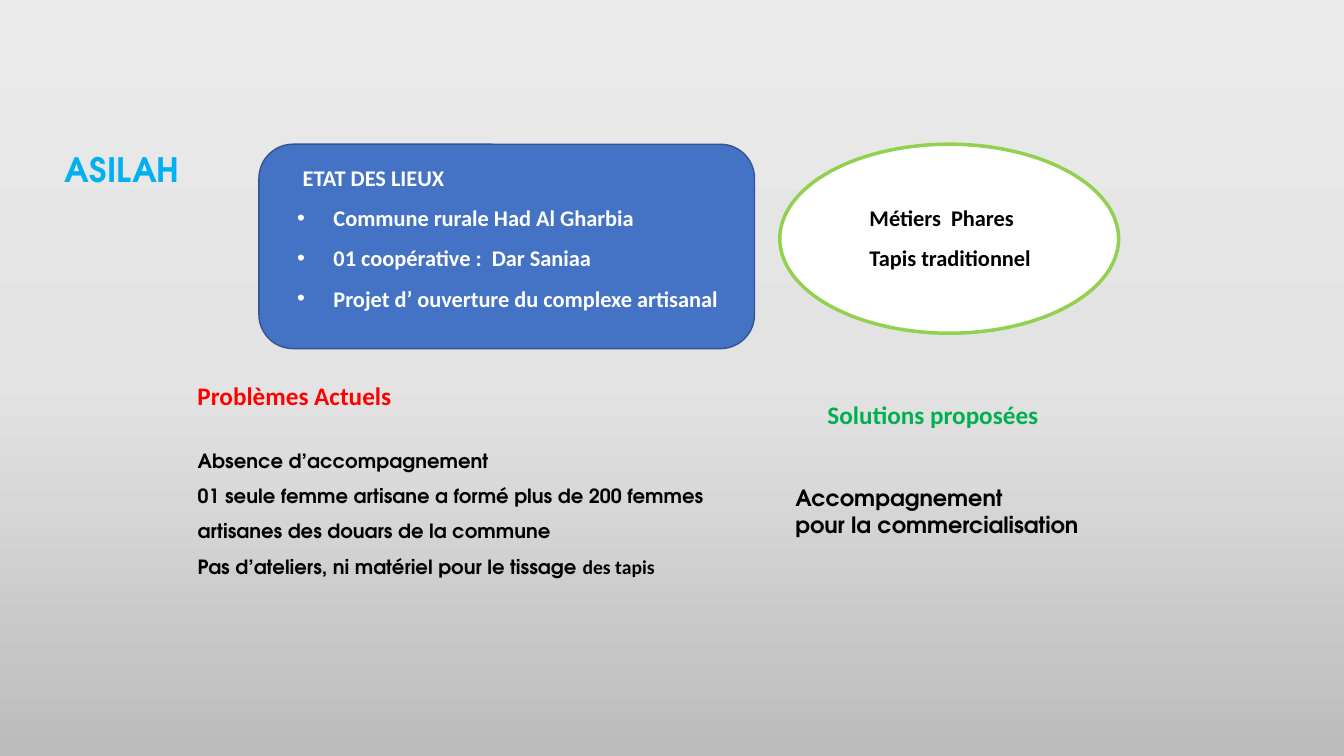
from copy import deepcopy

from lxml import etree
from pptx import Presentation
from pptx.dml.color import RGBColor
from pptx.enum.shapes import MSO_SHAPE
from pptx.enum.text import MSO_ANCHOR, MSO_AUTO_SIZE, PP_ALIGN
from pptx.oxml.ns import qn
from pptx.util import Pt

ROUND, OVAL = MSO_SHAPE.ROUNDED_RECTANGLE, MSO_SHAPE.OVAL
TOP, MID = MSO_ANCHOR.TOP, MSO_ANCHOR.MIDDLE
FIXED, LEFT = MSO_AUTO_SIZE.NONE, PP_ALIGN.LEFT
SANS, GEO = "Calibri", "TeX Gyre Adventor"


def tint(code):
    """Turn a hex string into a colour."""
    return RGBColor.from_string(code)


def assign(item, values):
    """Set each attribute of an item from a dict."""
    for name, value in values.items():
        setattr(item, name, value)


def place(item, box):
    """Move an item to a box given in points."""
    names = ("left", "top", "width", "height")
    assign(item, dict(zip(names, map(Pt, box))))


def mark(para, bullet, inset):
    """Give a paragraph its indent and its bullet, or none."""
    props = para._p.get_or_add_pPr()
    props.set("marL", str(Pt(inset)))
    props.set("indent", str(Pt(-inset if bullet else 0)))
    if bullet:
        etree.SubElement(props, qn("a:buFont")).set("typeface", "Arial")
        etree.SubElement(props, qn("a:buChar")).set("char", bullet)
    else:
        etree.SubElement(props, qn("a:buNone"))


def write(item, lines, look, hue, anchor=MID, space=1.0):
    """Fill an item with lines of (bullet, inset, runs of text and font)."""
    frame = item.text_frame
    assign(frame, {"word_wrap": True, "auto_size": FIXED,
                   "vertical_anchor": anchor})
    for index, (bullet, inset, runs) in enumerate(lines):
        para = frame.add_paragraph() if index else frame.paragraphs[0]
        mark(para, bullet, inset)
        assign(para, {"line_spacing": space, "space_before": Pt(0),
                      "alignment": LEFT})
        for text, face in runs:
            run = para.add_run()
            run.text = text
            assign(run.font, {"bold": True, **look, "name": face})
            run.font.color.rgb = tint(hue)


def plain(face, *texts):
    """Make unmarked lines in one font."""
    return [("", 0, [(text, face)]) for text in texts]


def label(slide, box, lines, look, hue, **rest):
    """Add a text box."""
    write(slide.shapes.add_textbox(*map(Pt, box)), lines, look, hue, **rest)


def panel(slide, kind, box, fill, edge, weight):
    """Add a filled and outlined shape."""
    shape = slide.shapes.add_shape(kind, *map(Pt, box))
    shape.shadow.inherit = False
    shape.fill.solid()
    shape.fill.fore_color.rgb = tint(fill)
    shape.line.color.rgb = tint(edge)
    shape.line.width = Pt(weight)


def backdrop(slide, codes):
    """Shade the background from top to bottom in even steps."""
    fill = slide.background.fill
    fill.gradient()
    fill.gradient_angle = 270
    stops = slide.element.find(".//" + qn("a:gsLst"))
    for _ in codes[2:]:
        stops.append(deepcopy(stops[0]))
    for index, (stop, code) in enumerate(zip(fill.gradient_stops, codes)):
        stop.color.rgb = tint(code)
        stop.position = index / (len(codes) - 1)


def status(slide, body, box):
    """Draw the current state panel with its list."""
    left, top, width, height = box
    panel(slide, ROUND, box, "4472C4", "325491", 1)
    place(body, (left + 20, top, width - 11, height - 22))
    body.element.getparent().append(body.element)
    points = ("Commune rurale Had Al Gharbia",
              "01 coopérative :  Dar Saniaa",
              "Projet d’ ouverture du complexe artisanal")
    lines = [("", 4, [("ETAT DES LIEUX", SANS)])]
    lines += [("•", 26, [(point, SANS)]) for point in points]
    write(body, lines, {"size": Pt(16)}, "FFFFFF", space=1.5)


def crafts(slide, box):
    """Draw the oval with the leading crafts."""
    left, top, width, height = box
    panel(slide, OVAL, box, "FFFFFF", "92D050", 2.5)
    label(slide, (left + 57, top + 29, 174, 65.5),
          plain(SANS, "Métiers  Phares", "Tapis traditionnel"),
          {"size": Pt(16)}, "000000", space=1.5)


def problems(slide, body, box):
    """Write the current problems under their heading."""
    left, top, width, height = box
    label(slide, (left, top, 202, 29), plain(SANS, "Problèmes Actuels"),
          {"size": Pt(18)}, "FF0000", anchor=TOP)
    place(body, (left, top + 40, width, height - 40))
    lines = plain(GEO, "Absence d’accompagnement",
                  "01 seule femme artisane a formé plus de 200 femmes "
                  "artisanes des douars de la commune")
    lines.append(("", 0, [("Pas d’ateliers, ni matériel pour le tissage ", GEO),
                          ("des tapis", SANS)]))
    write(body, lines, {"size": Pt(14)}, "000000", space=1.5)


def answers(slide, box):
    """Write the proposed solutions under their heading."""
    left, top, width, height = box
    label(slide, (left + 23, top, 202, 29), plain(SANS, "Solutions proposées"),
          {"size": Pt(18)}, "00B050", anchor=TOP)
    label(slide, (left, top + 60.5, width, height - 60.5),
          plain(GEO, "Accompagnement", "pour la commercialisation"),
          {"size": Pt(16)}, "000000", anchor=TOP)


def main():
    """Build and save the slide."""
    deck = Presentation()
    assign(deck, {"slide_width": Pt(960), "slide_height": Pt(540)})
    slide = deck.slides.add_slide(deck.slide_layouts[3])
    title, state, issues = slide.placeholders
    backdrop(slide, ("EBEAEA", "E4E3E3", "BDBCBC"))
    place(title, (39, 103, 118, 36))
    write(title, plain(GEO, "ASILAH"), {"size": Pt(24)}, "00B0F0")
    status(slide, state, (185, 103, 354, 146))
    crafts(slide, (557, 103, 242, 135))
    problems(slide, issues, (134, 268, 376.5, 149))
    answers(slide, (561, 282, 281.5, 126))
    deck.save("out.pptx")


if __name__ == "__main__":
    main()
